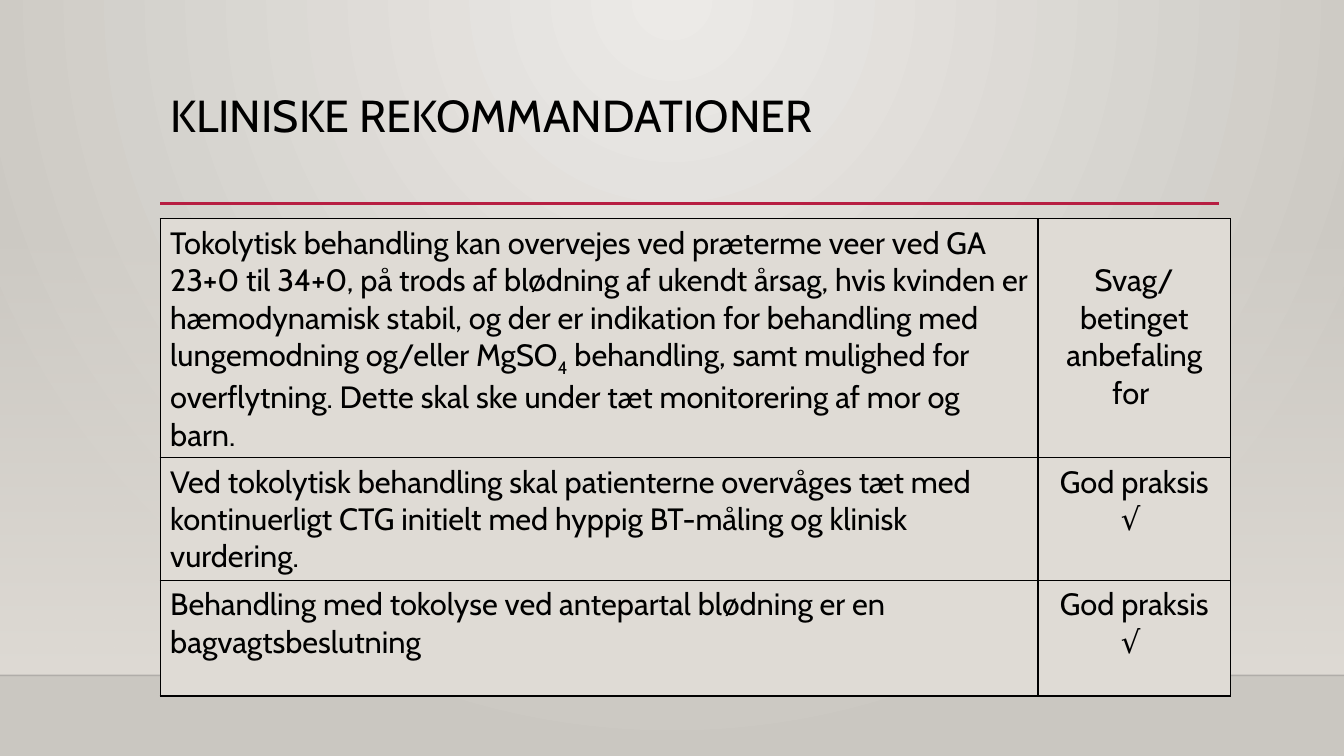
import pptx
import pptx.dml.color
import pptx.enum.shapes
import pptx.enum.text
import pptx.oxml
import pptx.oxml.ns
import pptx.util
from lxml import etree
from pptx.util import Cm

COLORS = {
    "glow": "ECEAE7",
    "backdrop": "CAC7C1",
    "wall": "DFDBD5",
    "floor_line": "000001",
    "accent": "B71E42",
    "text": "000000",
}
FONT = "Cabin"
SLIDE_WIDTH, SLIDE_HEIGHT = Cm(33.87), Cm(19.05)
FLOOR = Cm(17.02)
LEFT = Cm(4.04)

# Each row: height in cm, recommendation as (text, is_subscript) runs,
# strength of the recommendation, top margin of the strength in cm
RECOMMENDATIONS = [
    (4.67,
     [("Tokolytisk behandling kan overvejes ved præterme veer ved GA 23+0 til 34+0, "
       "på trods af blødning af ukendt årsag, hvis kvinden er hæmodynamisk stabil, og "
       "der er indikation for behandling med lungemodning og/eller MgSO", False),
      ("4", True),
      (" behandling, samt mulighed for overflytning. Dette skal ske under tæt "
       "monitorering af mor og barn.", False)],
     "Svag/betinget anbefaling for ", 1.09),
    (2.39,
     [("Ved tokolytisk behandling skal patienterne overvåges tæt med kontinuerligt CTG "
       "initielt med hyppig BT-måling og klinisk vurdering.", False)],
     "God praksis √ ", 0.15),
    (2.92,
     [("Behandling med tokolyse ved antepartal blødning er en bagvagtsbeslutning", False)],
     "God praksis √ ", 0.15),
]


def rgb(name):
    return pptx.dml.color.RGBColor.from_string(COLORS[name])


def set_alpha(color_element, percent):
    alpha = etree.SubElement(color_element, pptx.oxml.ns.qn("a:alpha"))
    alpha.set("val", str(percent * 1000))


def set_gradient(fill, first, last):
    fill.gradient()
    for stop, name in zip(fill.gradient_stops, (first, last)):
        stop.color.rgb = rgb(name)


def style_font(paragraph, size):
    paragraph.font.name = FONT
    paragraph.font.size = pptx.util.Pt(size)
    paragraph.font.color.rgb = rgb("text")


def add_rule(slide, left, top, width, color, weight):
    rule = slide.shapes.add_connector(
        pptx.enum.shapes.MSO_CONNECTOR.STRAIGHT, left, top, left + width, top)
    rule.line.color.rgb = rgb(color)
    rule.line.width = pptx.util.Pt(weight)
    etree.SubElement(rule._element.spPr, pptx.oxml.ns.qn("a:effectLst"))
    return rule


def add_backdrop(slide):
    """Radial background with a wall that fades in down to the floor line."""
    fill = slide.background.fill
    set_gradient(fill, "glow", "backdrop")
    linear = slide._element.find(".//" + pptx.oxml.ns.qn("a:lin"))
    radial = pptx.oxml.parse_xml(
        f'<a:path {pptx.oxml.ns.nsdecls("a")} path="circle">'
        '<a:fillToRect l="43000" r="43000" b="100000"/></a:path>')
    linear.getparent().replace(linear, radial)

    wall_top = Cm(5.61)
    wall = slide.shapes.add_shape(
        pptx.enum.shapes.MSO_SHAPE.RECTANGLE, 0, wall_top, SLIDE_WIDTH, FLOOR - wall_top)
    wall.shadow.inherit = False
    wall.line.fill.background()
    set_gradient(wall.fill, "wall", "wall")
    wall.fill.gradient_angle = 270
    set_alpha(wall._element.spPr.find(".//" + pptx.oxml.ns.qn("a:srgbClr")), 0)

    floor = add_rule(slide, 0, FLOOR, SLIDE_WIDTH, "floor_line", 1)
    set_alpha(floor._element.spPr.find(".//" + pptx.oxml.ns.qn("a:srgbClr")), 20)


def add_title(slide, left, top, width, height):
    """Heading with the accent rule along its lower edge."""
    add_rule(slide, left, top + height, width, "accent", 2.5)
    frame = slide.shapes.add_textbox(left, top, width, height).text_frame
    frame.word_wrap = True
    frame.vertical_anchor = pptx.enum.text.MSO_ANCHOR.TOP
    heading = frame.paragraphs[0]
    heading.text = "KLINISKE REKOMMANDATIONER"
    heading.line_spacing = 0.9
    style_font(heading, 32)


def style_cell(cell, top_margin):
    cell.margin_left = cell.margin_right = Cm(0.25)
    cell.margin_top, cell.margin_bottom = Cm(top_margin), Cm(0.15)
    cell.fill.solid()
    cell.fill.fore_color.rgb = rgb("wall")
    for position, side in enumerate("LRTB"):
        border = pptx.oxml.parse_xml(
            f'<a:ln{side} {pptx.oxml.ns.nsdecls("a")} w="12700"><a:solidFill>'
            f'<a:srgbClr val="{COLORS["text"]}"/></a:solidFill></a:ln{side}>')
        cell._tc.get_or_add_tcPr().insert(position, border)


def add_recommendations(slide, left, top, width, height):
    frame = slide.shapes.add_table(len(RECOMMENDATIONS), 2, left, top, width, height)
    table = frame.table
    table.first_row = table.horz_banding = False
    strength_width = Cm(4.85)
    table.columns[0].width = width - strength_width
    table.columns[1].width = strength_width
    for index, (row_height, runs, strength, strength_margin) in enumerate(RECOMMENDATIONS):
        table.rows[index].height = Cm(row_height)
        advice_cell, strength_cell = table.rows[index].cells
        style_cell(advice_cell, 0.15)
        style_cell(strength_cell, strength_margin)

        advice = advice_cell.text_frame.paragraphs[0]
        style_font(advice, 22)
        for text, is_subscript in runs:
            run = advice.add_run()
            run.text = text
            run.font.name = FONT
            run.font.size = pptx.util.Pt(22)
            run.font.color.rgb = rgb("text")
            if is_subscript:
                run.font._element.set("baseline", "-25000")

        grade = strength_cell.text_frame.paragraphs[0]
        grade.text = strength
        grade.alignment = pptx.enum.text.PP_ALIGN.CENTER
        style_font(grade, 22)
    frame.height = height


def main():
    presentation = pptx.Presentation()
    presentation.slide_width, presentation.slide_height = SLIDE_WIDTH, SLIDE_HEIGHT
    slide = presentation.slides.add_slide(presentation.slide_layouts[6])
    add_backdrop(slide)
    add_title(slide, LEFT, Cm(2.23), Cm(26.68), Cm(2.9))
    add_recommendations(slide, LEFT, Cm(5.51), Cm(26.97), Cm(10.44))
    presentation.save("out.pptx")


if __name__ == "__main__":
    main()
